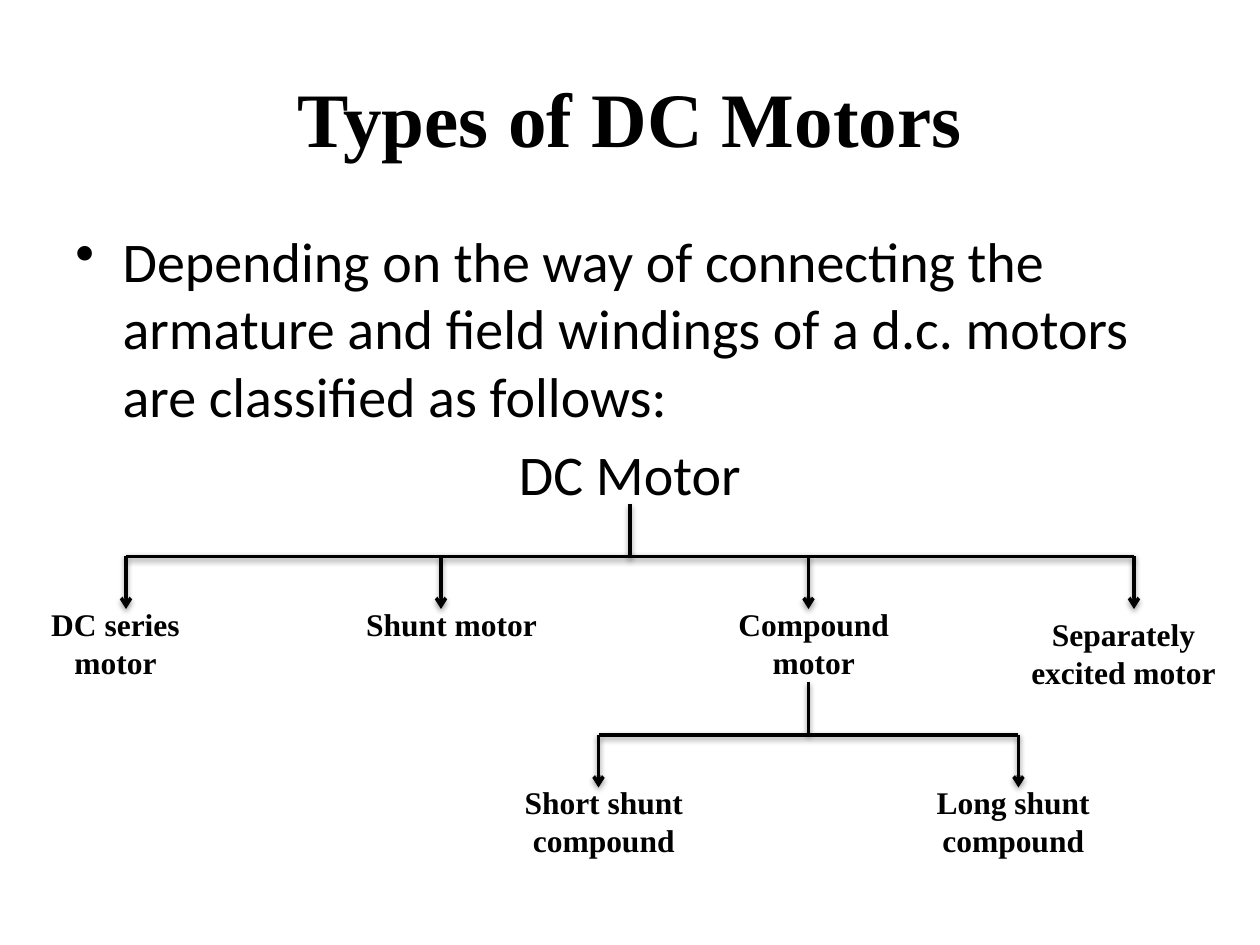
"""Build a slide that sorts DC motors into a tree of types."""
import dataclasses

import lxml.etree
import pptx
import pptx.dml.color
import pptx.enum.shapes
import pptx.enum.text
import pptx.oxml
import pptx.oxml.ns
import pptx.util

SCALE = 7620
ALIGN = pptx.enum.text.PP_ALIGN
ANCHOR = pptx.enum.text.MSO_ANCHOR


def emu(px):
    return pptx.util.Emu(px * SCALE)


@dataclasses.dataclass
class Theme:
    ink: str = "000000"
    serif: str = "Times New Roman"
    sans: str = "Calibri"
    title: int = 44
    body: int = 32
    label: int = 18
    line: int = 2
    gap: float = 6.4
    indent: int = 45


class Deck:
    def __init__(self, theme):
        self.theme = theme
        self.ink = pptx.dml.color.RGBColor.from_string(theme.ink)
        self.file = pptx.Presentation()
        self.file.slide_width = emu(1200)
        self.file.slide_height = emu(900)
        self.slide = self.file.slides.add_slide(self.file.slide_layouts[6])

    def frame(self, box, anchor=ANCHOR.TOP):
        shape = self.slide.shapes.add_textbox(*map(emu, box))
        frame = shape.text_frame
        frame.word_wrap = True
        frame.vertical_anchor = anchor
        return frame

    def run(self, para, text, size, face, bold=False):
        run = para.add_run()
        run.text = text
        font = run.font
        font.size = pptx.util.Pt(size)
        font.name = face
        font.bold = bold
        font.color.rgb = self.ink

    def title(self, text, box):
        para = self.frame(box, ANCHOR.MIDDLE).paragraphs[0]
        para.alignment = ALIGN.CENTER
        self.run(para, text, self.theme.title, self.theme.serif, True)

    def body(self, point, root, box):
        frame = self.frame(box)
        first, last = frame.paragraphs[0], frame.add_paragraph()
        for para, text in ((first, point), (last, root)):
            para.space_before = pptx.util.Pt(self.theme.gap)
            props = para._p.get_or_add_pPr()
            props.set("marL", str(emu(self.theme.indent)))
            props.set("indent", str(-emu(self.theme.indent)))
            self.run(para, text, self.theme.body, self.theme.sans)
        mark = lxml.etree.SubElement(
            first._p.pPr, pptx.oxml.ns.qn("a:buChar"))
        mark.set("char", "•")
        last.alignment = ALIGN.CENTER

    def label(self, text, box):
        frame = self.frame(box)
        frame.auto_size = pptx.enum.text.MSO_AUTO_SIZE.SHAPE_TO_FIT_TEXT
        para = frame.paragraphs[0]
        para.alignment = ALIGN.CENTER
        self.run(para, text, self.theme.label, self.theme.serif, True)

    def line(self, start, end, arrow=False):
        kind = pptx.enum.shapes.MSO_CONNECTOR.STRAIGHT
        link = self.slide.shapes.add_connector(kind, *map(emu, start + end))
        link.line.color.rgb = self.ink
        link.line.width = pptx.util.Pt(self.theme.line)
        if arrow:
            tip = lxml.etree.SubElement(
                link.line._ln, pptx.oxml.ns.qn("a:tailEnd"))
            tip.set("type", "arrow")
        link._element.spPr.append(pptx.oxml.parse_xml(
            f'<a:effectLst {pptx.oxml.ns.nsdecls("a")}>'
            '<a:outerShdw blurRad="40000" dist="20000" dir="5400000"'
            f' rotWithShape="0"><a:srgbClr val="{self.theme.ink}">'
            '<a:alpha val="38000"/></a:srgbClr></a:outerShdw></a:effectLst>'))

    def tree(self, stem, top, bars, drops):
        rail = top + 50
        self.line((stem, top), (stem, rail))
        for start, end in bars:
            self.line((start, rail), (end, rail))
        for x in drops:
            self.line((x, rail), (x, rail + 50), True)

    def save(self):
        self.file.save("out.pptx")


def main():
    deck = Deck(Theme())
    deck.title("Types of DC Motors", (60, 36, 1080, 150))
    deck.body(
        "Depending on the way of connecting the armature and field "
        "windings of a d.c. motors are classified as follows:",
        "DC Motor", (60, 210, 1080, 594))
    deck.tree(600, 480, ((600, 120), (600, 1080)), (120, 420, 770, 1080))
    deck.tree(770, 650, ((970, 570),), (570, 970))
    for text, box in (
        ("DC series motor", (0, 570, 220, 85)),
        ("Shunt motor", (330, 570, 200, 48)),
        ("Compound motor", (690, 570, 170, 85)),
        ("Separately excited motor", (970, 580, 200, 85)),
        ("Short shunt compound", (450, 740, 250, 85)),
        ("Long shunt compound", (870, 740, 190, 85)),
    ):
        deck.label(text, box)
    deck.save()


if __name__ == "__main__":
    main()
